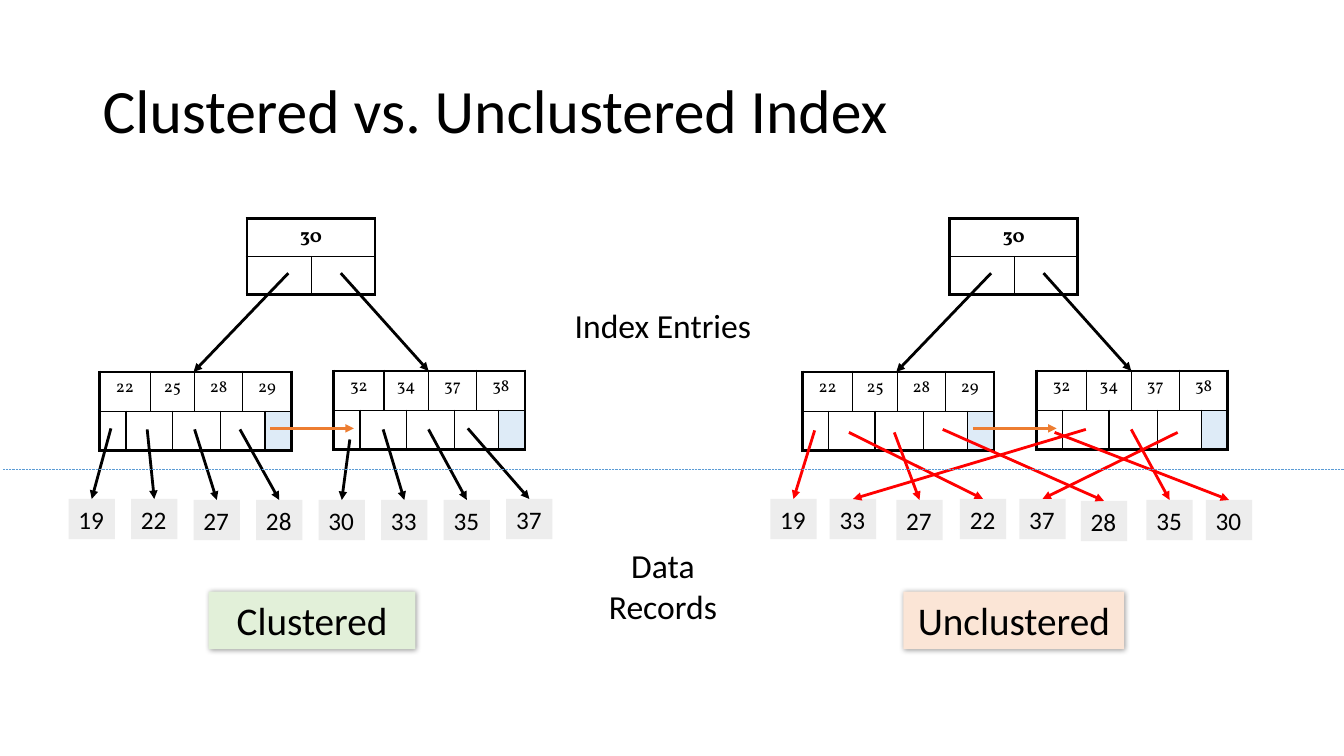
from lxml.etree import SubElement
from pptx import Presentation
from pptx.dml.color import RGBColor
from pptx.enum.dml import MSO_LINE
from pptx.enum.shapes import MSO_CONNECTOR
from pptx.enum.text import MSO_ANCHOR, MSO_AUTO_SIZE, PP_ALIGN
from pptx.oxml.ns import qn
from pptx.util import Inches, Pt

BLACK = RGBColor(0x00, 0x00, 0x00)
RED = RGBColor(0xFF, 0x00, 0x00)
ORANGE = RGBColor(0xED, 0x7D, 0x31)
BLUE = RGBColor(0x5B, 0x9B, 0xD5)
PALE = RGBColor(0xDE, 0xEB, 0xF7)
GRAY = RGBColor(0xED, 0xED, 0xED)
GREEN = RGBColor(0xE2, 0xF0, 0xD9)
PEACH = RGBColor(0xFB, 0xE5, 0xD6)

WIDE, HIGH = 13.33, 7.5
SHIFT = 6.97
TITLE = "Clustered vs. Unclustered Index"
NOTES = [("Index Entries", 2.98), ("Data\vRecords", 5.36)]
ROOT = (2.45, 2.17, [0.64, 0.63], 0.375, [("30", 2)], [1, 1], 14)
COLS = [0.26, 0.22, 0.22, 0.22, 0.26, 0.22, 0.22, 0.26]
SPANS = [1, 2, 2, 2, 1]
LEAVES = [
    (0.99, 3.69, ["22", "25", "28", "29"]),
    (3.31, 3.68, ["32", "34", "37", "38"]),
]
BRANCHES = [((2.86, 2.71), (1.92, 3.69)), ((3.38, 2.71), (4.25, 3.68))]
NEXT = ((2.68, 4.25), (3.51, 4.25))

# text, left, top, pointer start
TREES = [
    (0, BLACK, "Clustered", 2.07, 2.05, GREEN, [
        ("19", 0.68, 4.95, (1.1, 4.25)),
        ("22", 1.3, 4.95, (1.46, 4.26)),
        ("27", 1.92, 4.96, (1.93, 4.26)),
        ("28", 2.54, 4.96, (2.38, 4.26)),
        ("30", 3.16, 4.96, (3.47, 4.36)),
        ("33", 3.78, 4.96, (3.8, 4.26)),
        ("35", 4.4, 4.96, (4.25, 4.26)),
        ("37", 5.02, 4.95, (4.64, 4.25)),
    ]),
    (SHIFT, RED, "Unclustered", 8.96, 2.19, PEACH, [
        ("19", 7.64, 4.95, (8.08, 4.27)),
        ("33", 8.23, 4.95, (10.77, 4.26)),
        ("27", 8.89, 4.96, (8.87, 4.29)),
        ("22", 9.52, 4.95, (8.42, 4.29)),
        ("37", 10.11, 4.95, (11.68, 4.29)),
        ("28", 10.72, 4.97, (9.35, 4.26)),
        ("35", 11.37, 4.96, (11.22, 4.26)),
        ("30", 11.96, 4.96, (10.46, 4.29)),
    ]),
]


def style(para, size, face="Calibri", bold=False, align=None):
    para.font.name = face
    para.font.size = Pt(size)
    para.font.bold = bold
    para.font.color.rgb = BLACK
    para.alignment = align


def write(slide, text, place, size, align=None, fill=None, wrap=False, grow=True):
    box = slide.shapes.add_textbox(*map(Inches, place))
    frame = box.text_frame
    frame.text = text
    frame.word_wrap = wrap
    if grow:
        frame.auto_size = MSO_AUTO_SIZE.SHAPE_TO_FIT_TEXT
    for para in frame.paragraphs:
        style(para, size, align=align)
    if fill is not None:
        box.fill.solid()
        box.fill.fore_color.rgb = fill
    return box


def draw(slide, start, end, color, width=2, arrow=True):
    line = slide.shapes.add_connector(
        MSO_CONNECTOR.STRAIGHT, *map(Inches, (*start, *end)))
    line.line.color.rgb = color
    line.line.width = Pt(width)
    props = line._element.spPr
    if arrow:
        SubElement(props.find(qn("a:ln")), qn("a:tailEnd"), type="triangle")
    SubElement(props, qn("a:effectLst"))
    return line


def edge(cell, sides):
    props = cell._tc.get_or_add_tcPr()
    for side, width in zip("LRTB", sides):
        line = SubElement(props, qn(f"a:ln{side}"), w=str(Pt(width)))
        fill = SubElement(line, qn("a:solidFill"))
        SubElement(fill, qn("a:srgbClr"), val=str(BLACK))


def grid(slide, left, top, cols, high, keys, slots, size, spare=False):
    place = map(Inches, (left, top, sum(cols), 2 * high))
    table = slide.shapes.add_table(2, len(cols), *place).table
    table.first_row = table.horz_banding = False
    for col, width in zip(table.columns, cols):
        col.width = Inches(width)
    for row, parts in enumerate((keys, [("", span) for span in slots])):
        table.rows[row].height = Inches(high)
        at = 0
        for text, span in parts:
            cell = table.cell(row, at)
            last = at + span == len(cols)
            if span > 1:
                cell.merge(table.cell(row, at + span - 1))
            edge(cell, [2.25 if outer else 1
                        for outer in (at == 0, last, row == 0, row == 1)])
            if spare and row and last:
                cell.fill.solid()
                cell.fill.fore_color.rgb = PALE
            else:
                cell.fill.background()
            cell.text = text
            style(cell.text_frame.paragraphs[0], size, "Vollkorn",
                  len(keys) == 1, PP_ALIGN.CENTER)
            at += span


def shade(box):
    effects = SubElement(box._element.spPr, qn("a:effectLst"))
    shadow = SubElement(effects, qn("a:outerShdw"), blurRad=str(Pt(4)),
                        dist=str(Pt(1)), dir="2700000", algn="tl", rotWithShape="0")
    tone = SubElement(shadow, qn("a:srgbClr"), val=str(BLACK))
    SubElement(tone, qn("a:alpha"), val="40000")


def tree(slide, shift, color, label, left, width, fill, records):
    def move(spot):
        return spot[0] + shift, spot[1]

    grid(slide, ROOT[0] + shift, *ROOT[1:])
    for x, y, keys in LEAVES:
        grid(slide, x + shift, y, COLS, 0.39, [(key, 2) for key in keys],
             SPANS, 12, True)
    for start, end in BRANCHES:
        draw(slide, move(start), move(end), BLACK)
    for text, x, y, start in records:
        box = write(slide, text, (x, y, 0.46, 0.4), 18, fill=GRAY)
        draw(slide, start, (x + 0.23, y), color).end_connect(box, 0)
    draw(slide, *map(move, NEXT), ORANGE)
    shade(write(slide, label, (left, 5.87, width, 0.57), 28,
                PP_ALIGN.CENTER, fill, True))


def main():
    deck = Presentation()
    deck.slide_width, deck.slide_height = Inches(WIDE), Inches(HIGH)
    slide = deck.slides.add_slide(deck.slide_layouts[6])
    title = write(slide, TITLE, (0.92, 0.4, 11.5, 1.45), 44, wrap=True, grow=False)
    title.text_frame.vertical_anchor = MSO_ANCHOR.MIDDLE
    title.text_frame.paragraphs[0].line_spacing = 0.9
    for part in TREES:
        tree(slide, *part)
    rule = draw(slide, (0.03, 4.66), (13.37, 4.66), BLUE, 0.5, False)
    rule.line.dash_style = MSO_LINE.ROUND_DOT
    for text, top in NOTES:
        write(slide, text, (5.59, top, 1.97, 0.5), 24, PP_ALIGN.CENTER)
    deck.save("out.pptx")


if __name__ == "__main__":
    main()
